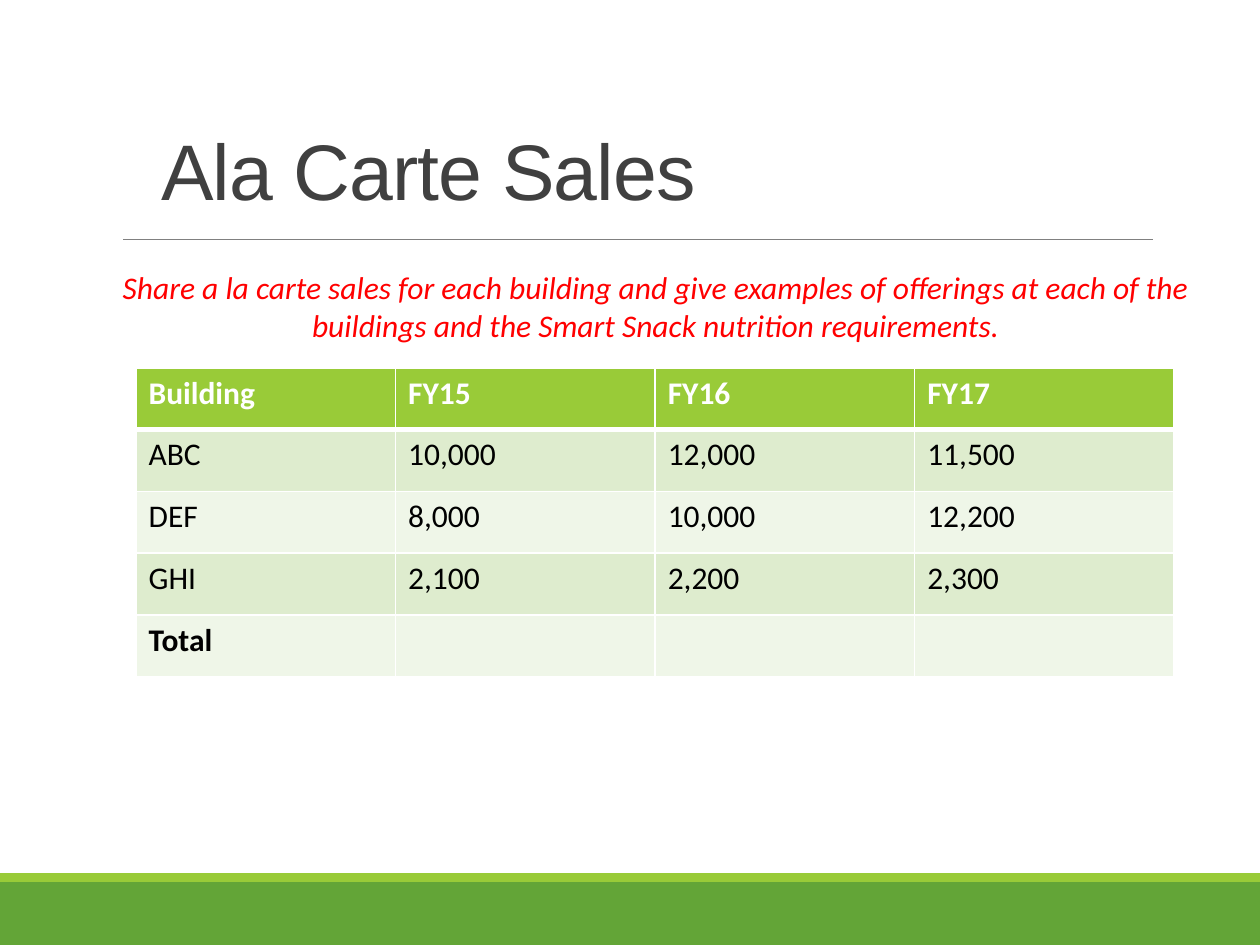
from lxml.etree import SubElement
from pptx import Presentation
from pptx.dml.color import RGBColor
from pptx.enum.shapes import MSO_CONNECTOR, MSO_SHAPE
from pptx.enum.text import MSO_ANCHOR as Anchor, PP_ALIGN as Align
from pptx.oxml.ns import qn
from pptx.util import Inches, Pt

WIDTH, HEIGHT = 10, 7.5
BAND_TOP = 7
STRIPE_HEIGHT = 0.07

COLORS = {
    "band": "63A537",
    "accent": "99CB38",
    "rule": "808080",
    "title": "404040",
    "note": "FF0000",
    "odd row": "DEECCE",
    "even row": "EFF6E8",
    "light": "FFFFFF",
    "dark": "000000",
}

SALES = [
    ["Building", "FY15", "FY16", "FY17"],
    ["ABC", "10,000", "12,000", "11,500"],
    ["DEF", "8,000", "10,000", "12,200"],
    ["GHI", "2,100", "2,200", "2,300"],
    ["Total", "", "", ""],
]


def color(name):
    return RGBColor.from_string(COLORS[name])


def style_font(font, size, name, color_name, bold=False, italic=False):
    font.size, font.name = Pt(size), name
    font.bold, font.italic = bold, italic
    font.color.rgb = color(color_name)


def add_band(slide, top, height, color_name):
    """Add a full-width strip."""
    band = slide.shapes.add_shape(
        MSO_SHAPE.RECTANGLE, 0, Inches(top), Inches(WIDTH), Inches(height))
    band.shadow.inherit = False
    band.fill.solid()
    band.fill.fore_color.rgb = color(color_name)
    band.line.fill.background()


def add_rule(slide, left, right, y):
    rule = slide.shapes.add_connector(
        MSO_CONNECTOR.STRAIGHT, Inches(left), Inches(y), Inches(right), Inches(y))
    rule.line.color.rgb = color("rule")
    rule.line.width = Pt(0.5)
    SubElement(rule._element.spPr, qn("a:effectLst"))


def add_text(slide, box, text, anchor=Anchor.TOP):
    """Add a wrapping one-paragraph text box and return its paragraph."""
    frame = slide.shapes.add_textbox(*map(Inches, box)).text_frame
    frame.word_wrap = True
    frame.vertical_anchor = anchor
    paragraph = frame.paragraphs[0]
    paragraph.text = text
    return paragraph


def set_borders(cell, top, bottom):
    """Draw white cell borders; top and bottom are widths in points."""
    properties = cell._tc.get_or_add_tcPr()
    for side, width in (("L", 1), ("R", 1), ("T", top), ("B", bottom)):
        line = SubElement(properties, qn(f"a:ln{side}"), w=str(Pt(width)))
        fill = SubElement(line, qn("a:solidFill"))
        SubElement(fill, qn("a:srgbClr"), val=COLORS["light"])


def add_sales_table(slide, left, top, column_width, row_height):
    row_count, column_count = len(SALES), len(SALES[0])
    table = slide.shapes.add_table(
        row_count, column_count, Inches(left), Inches(top),
        Inches(column_width * column_count), Inches(row_height * row_count)).table
    for row, values in enumerate(SALES):
        header = row == 0
        fill_name = "accent" if header else "odd row" if row % 2 else "even row"
        for column, value in enumerate(values):
            cell = table.cell(row, column)
            set_borders(cell, top=3 if row == 1 else 1, bottom=3 if header else 1)
            cell.fill.solid()
            cell.fill.fore_color.rgb = color(fill_name)
            cell.text = value
            style_font(cell.text_frame.paragraphs[0].font, 18, "Calibri",
                       "light" if header else "dark",
                       bold=header or values[0] == "Total")


def main():
    presentation = Presentation()
    presentation.slide_width, presentation.slide_height = Inches(WIDTH), Inches(HEIGHT)
    slide = presentation.slides.add_slide(presentation.slide_layouts[6])

    add_band(slide, BAND_TOP, HEIGHT - BAND_TOP, "band")
    add_band(slide, BAND_TOP - STRIPE_HEIGHT, STRIPE_HEIGHT, "accent")
    add_rule(slide, 0.98, 9.15, 1.9)

    title = add_text(slide, (1.18, 0.66, 7.68, 1.11), "Ala Carte Sales", Anchor.BOTTOM)
    title.line_spacing = 0.85
    style_font(title.font, 45, "Arial", "title")
    title.runs[0]._r.get_or_add_rPr().set("spc", "-50")

    note = add_text(
        slide, (0.83, 2.08, 8.75, 0.71),
        "Share a la carte sales for each building and give examples of offerings "
        "at each of the buildings and the Smart Snack nutrition requirements.")
    note.alignment = Align.CENTER
    style_font(note.font, 18, "Calibri", "note", italic=True)

    add_sales_table(slide, 1.08, 2.92, column_width=2.06, row_height=0.49)
    presentation.save("out.pptx")


if __name__ == "__main__":
    main()
